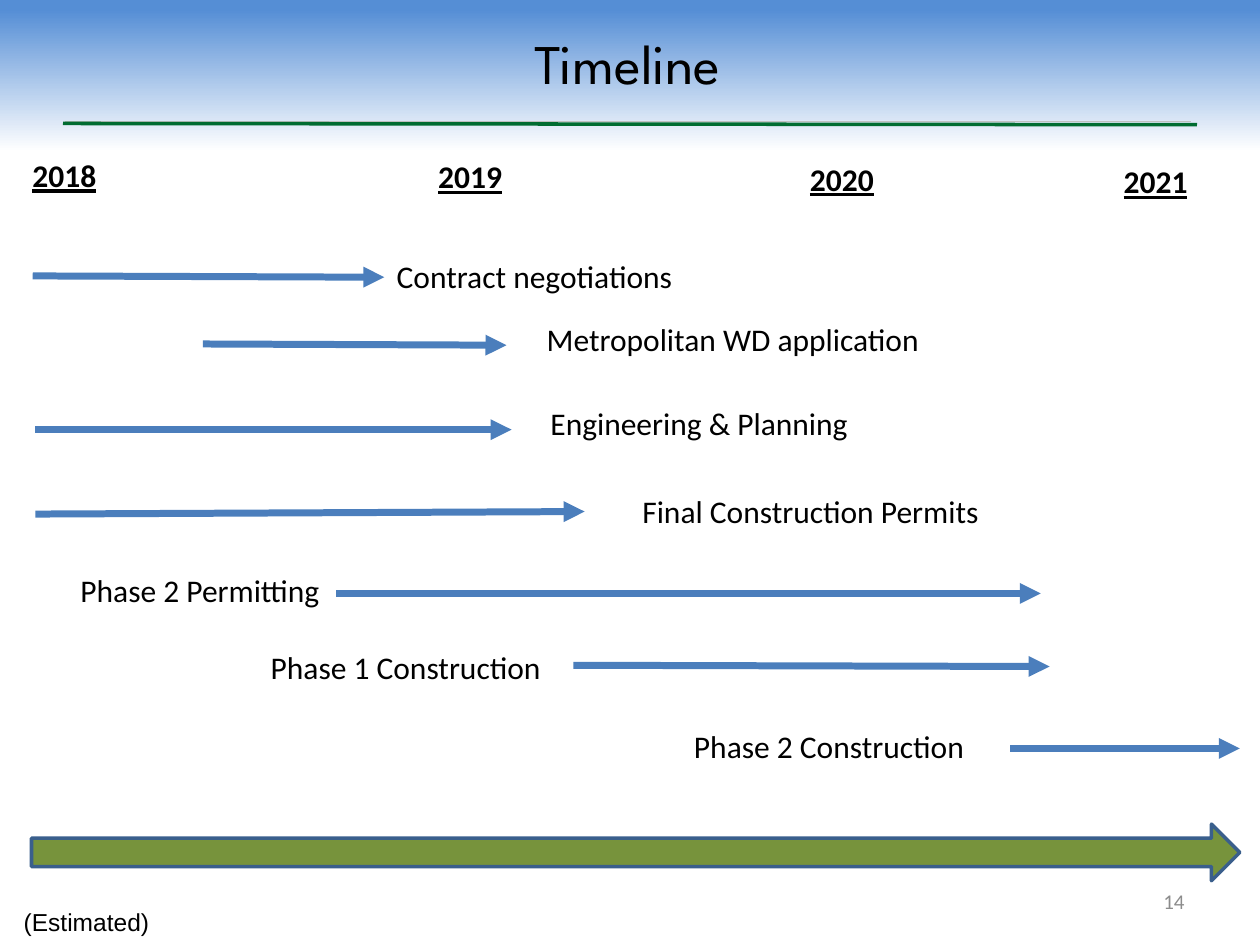
"""Build a project timeline slide with phase arrows under year headings."""
from dataclasses import dataclass

from lxml.etree import SubElement
from pptx import Presentation
from pptx.dml.color import RGBColor as Color
from pptx.enum.shapes import MSO_CONNECTOR as Connector, MSO_SHAPE as Shape
from pptx.enum.text import MSO_ANCHOR as Anchor, MSO_AUTO_SIZE as AutoSize, PP_ALIGN as Align
from pptx.oxml.ns import qn
from pptx.util import Inches, Pt

COLUMNS, ROWS = 10, 7.5
WIDTH, HEIGHT = Inches(10), Inches(7.5)
LABEL_HEIGHT = 0.4


@dataclass(frozen=True)
class Theme:
    """Colours, fonts and sizes of the slide."""
    sky: str = "558ED5"
    white: str = "FFFFFF"
    ink: str = "000000"
    muted: str = "8C8C8C"
    hairline: str = "BFBFBF"
    rule: str = "006C31"
    phase: str = "4B7EBC"
    span_fill: str = "77933C"
    span_line: str = "3A5F8C"
    title_font: str = "League Spartan"
    label_font: str = "Calibri"
    note_font: str = "Arial"
    title_size: int = 32
    label_size: int = 18
    note_size: int = 14
    number_size: int = 12


THEME = Theme()

YEARS = [
    ("2018", 0.16, 1.19, 0.86),
    ("2019", 3.38, 1.2, 0.86),
    ("2020", 6.33, 1.22, 0.78),
    ("2021", 8.82, 1.24, 0.78),
]

PHASES = [
    ("Contract negotiations", (3.05, 1.99, 2.42), (0.26, 2.19, 3.05, 2.2)),
    ("Metropolitan WD application", (4.24, 2.49, 3.19), (1.61, 2.73, 4.02, 2.74)),
    ("Engineering & Planning", (4.27, 3.16, 2.59), (0.28, 3.41, 4.06, 3.41)),
    ("Final Construction Permits", (5, 3.86, 2.9), (0.28, 4.08, 4.64, 4.06)),
    ("Phase 2 Permitting", (0.54, 4.48, 2.13), (2.67, 4.71, 8.26, 4.71)),
    ("Phase 1 Construction", (2.05, 5.09, 2.37), (4.55, 5.28, 8.33, 5.29)),
    ("Phase 2 Construction", (5.41, 5.72, 2.37), (8.02, 5.94, 9.84, 5.94)),
]


def col(count):
    """Return the length of a number of grid columns."""
    return round(WIDTH * count / COLUMNS)


def row(count):
    """Return the length of a number of grid rows."""
    return round(HEIGHT * count / ROWS)


def place(left, top, width, height):
    """Return a grid rectangle as slide lengths."""
    return col(left), row(top), col(width), row(height)


def set_font(para, size, name=THEME.label_font, color=THEME.ink):
    """Format a whole paragraph."""
    para.font.size, para.font.name = Pt(size), name
    para.font.color.rgb = Color.from_string(color)


def add_background(page):
    """Fade the page from sky blue to white below the title."""
    fill = page.background.fill
    fill.gradient()
    fill.gradient_angle = 270
    stops = zip(fill.gradient_stops, (0.01, 0.16), (THEME.sky, THEME.white))
    for stop, position, color in stops:
        stop.position = position
        stop.color.rgb = Color.from_string(color)


def add_title(page, text):
    """Move and format the title placeholder."""
    title = page.shapes.title
    title.left, title.top, title.width, title.height = place(-0.02, 0.18, 10, 0.61)
    frame = title.text_frame
    frame.text = text
    frame.auto_size, frame.vertical_anchor = AutoSize.NONE, Anchor.TOP
    para = frame.paragraphs[0]
    para.alignment = Align.CENTER
    set_font(para, THEME.title_size, THEME.title_font)


def add_label(page, text, left, top, width, height=LABEL_HEIGHT,
              size=THEME.label_size, wrap=False, **font):
    """Add a one-line text box and return it."""
    box = page.shapes.add_textbox(*place(left, top, width, height))
    box.text_frame.word_wrap = wrap
    para = box.text_frame.paragraphs[0]
    para.text = text
    set_font(para, size, **font)
    return box


def add_year(page, text, left, top, width):
    """Add a bold underlined year heading."""
    box = add_label(page, text, left, top, width, wrap=True)
    font = box.text_frame.paragraphs[0].font
    font.bold = font.underline = True


def add_line(page, ends, color, weight, arrow=False):
    """Add a straight line, with an arrowhead at its end if asked."""
    x1, y1, x2, y2 = ends
    line = page.shapes.add_connector(Connector.STRAIGHT, col(x1), row(y1), col(x2), row(y2))
    line.line.color.rgb = Color.from_string(color)
    line.line.width = Pt(weight)
    if arrow:
        SubElement(line.line._get_or_add_ln(), qn("a:tailEnd"), type="triangle")
    SubElement(line._element.spPr, qn("a:effectLst"))


def add_span(page):
    """Add the block arrow that runs along the whole period."""
    span = page.shapes.add_shape(Shape.RIGHT_ARROW, *place(0.25, 6.54, 9.59, 0.45))
    span.shadow.inherit = False
    span.fill.solid()
    span.fill.fore_color.rgb = Color.from_string(THEME.span_fill)
    span.line.color.rgb = Color.from_string(THEME.span_line)
    span.line.width = Pt(2)


def add_page_number(page, text):
    """Add the page number at the lower right."""
    box = add_label(page, text, 7.17, 6.95, 2.33, size=THEME.number_size,
                    wrap=True, color=THEME.muted)
    box.text_frame.vertical_anchor = Anchor.MIDDLE
    box.text_frame.paragraphs[0].alignment = Align.RIGHT


def main():
    """Build and save the deck."""
    deck = Presentation()
    deck.slide_width, deck.slide_height = WIDTH, HEIGHT
    page = deck.slides.add_slide(deck.slide_layouts.get_by_name("Title Only"))
    add_background(page)
    add_title(page, "Timeline")
    add_line(page, (9.45, 0.96, 0.52, 0.96), THEME.hairline, 0.25)
    add_line(page, (9.5, 0.99, 0.5, 0.98), THEME.rule, 2)
    for year in YEARS:
        add_year(page, *year)
    for text, label, ends in PHASES:
        add_line(page, ends, THEME.phase, 4, arrow=True)
        add_label(page, text, *label)
    add_span(page)
    add_label(page, "(Estimated)", 0.09, 7.15, 1.2, 0.34, THEME.note_size, name=THEME.note_font)
    add_page_number(page, "14")
    deck.save("out.pptx")


if __name__ == "__main__":
    main()
